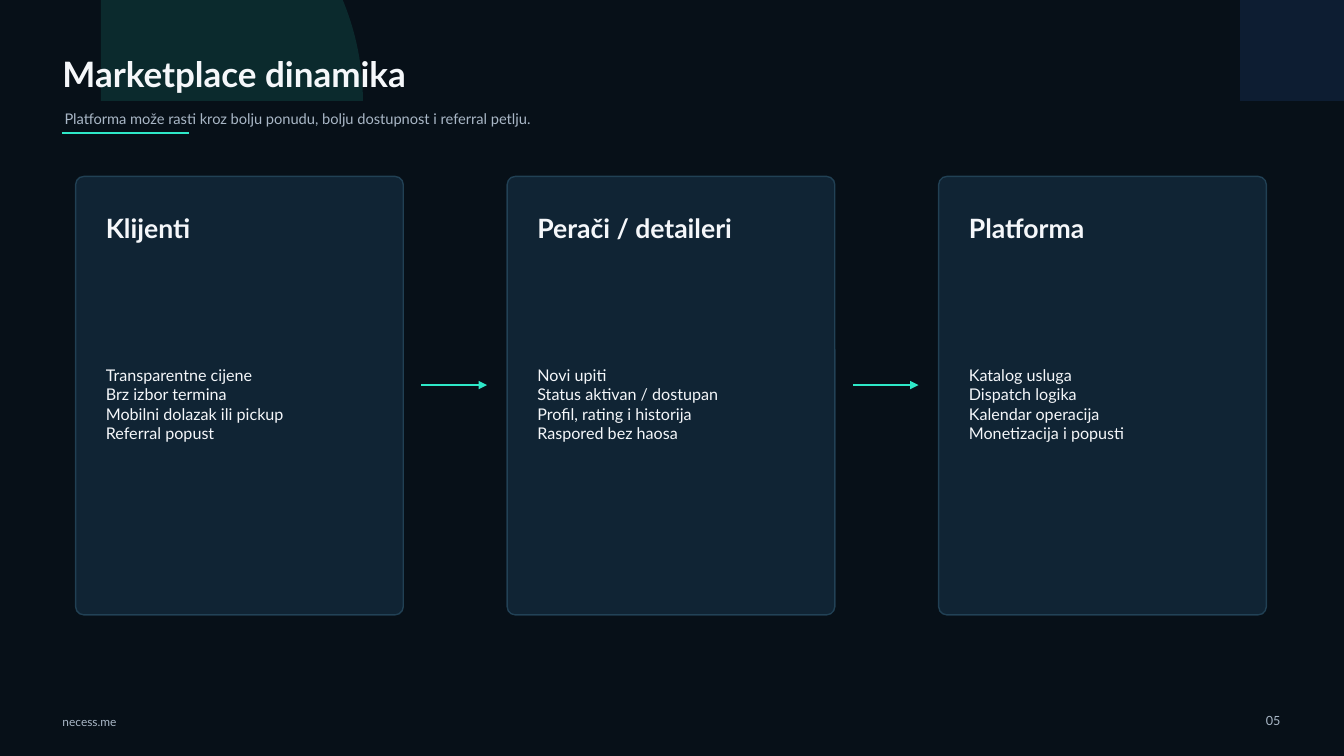
"""Build the marketplace dynamics slide: three linked cards on a dark background."""
import pptx
import pptx.dml.color
import pptx.enum.shapes
import pptx.enum.text
import pptx.oxml
import pptx.oxml.ns
import pptx.util

TITLE = "Marketplace dinamika"
SUBTITLE = "Platforma može rasti kroz bolju ponudu, bolju dostupnost i referral petlju."
SITE = "necess.me"
PAGE = "05"
CARDS = [
    ("Klijenti", ["Transparentne cijene", "Brz izbor termina",
                  "Mobilni dolazak ili pickup", "Referral popust"]),
    ("Perači / detaileri", ["Novi upiti", "Status aktivan / dostupan",
                            "Profil, rating i historija", "Raspored bez haosa"]),
    ("Platforma", ["Katalog usluga", "Dispatch logika",
                   "Kalendar operacija", "Monetizacija i popusti"]),
]

COLORS = {"night": "071018", "card": "102434", "edge": "25475C", "mint": "2EE8C8",
          "blue": "3B82F6", "white": "F5F7FA", "grey": "A9B7C6"}
STYLES = {
    "title": {"size": 25, "color": "white", "bold": True},
    "subtitle": {"size": 10.5, "color": "grey"},
    "site": {"size": 8.5, "color": "grey"},
    "page": {"size": 9, "color": "grey"},
    "heading": {"size": 19, "color": "white", "bold": True},
    "points": {"size": 11.5, "color": "white"},
}
FONT = "Lato"
PX = 9144
WIDTH, HEIGHT = 1333, 750
CARD_LEFT, CARD_TOP, CARD_WIDTH, CARD_HEIGHT = 75, 175, 325, 435
CARD_STEP = 428
CARD_PADDING = 30
ARROW_GAP, ARROW_LENGTH, ARROW_Y = 18, 65, 382

SHAPES = pptx.enum.shapes.MSO_SHAPE
ALIGN = pptx.enum.text.PP_ALIGN


def emu(*lengths):
    return [pptx.util.Emu(length * PX) for length in lengths]


def rgb(name):
    return pptx.dml.color.RGBColor.from_string(COLORS[name])


def add_xml(parent, tag, **attributes):
    child = pptx.oxml.parse_xml(f"<a:{tag} {pptx.oxml.ns.nsdecls('a')}/>")
    for key, value in attributes.items():
        child.set(key, value)
    parent.append(child)


def set_opacity(area, percent):
    for color in area.iter(pptx.oxml.ns.qn("a:srgbClr")):
        add_xml(color, "alpha", val=str(percent * 1000))


def add_panel(slide, kind, box, fill, line=None):
    panel = slide.shapes.add_shape(kind, *emu(*box))
    panel.shadow.inherit = False
    panel.fill.solid()
    panel.fill.fore_color.rgb = rgb(fill)
    if line:
        panel.line.color.rgb = rgb(line)
        panel.line.width = pptx.util.Pt(1)
    else:
        panel.line.fill.background()
    return panel


def add_text(slide, box, lines, style, align=ALIGN.LEFT):
    frame = slide.shapes.add_textbox(*emu(*box)).text_frame
    layout = {"word_wrap": True, "vertical_anchor": pptx.enum.text.MSO_ANCHOR.MIDDLE,
              "margin_left": 0, "margin_top": 0, "margin_right": 0, "margin_bottom": 0}
    for key, value in layout.items():
        setattr(frame, key, value)
    look = STYLES[style]
    font_values = {"name": FONT, "size": pptx.util.Pt(look["size"]),
                   "bold": look.get("bold", False)}
    frame.text = "\n".join(lines)
    for paragraph in frame.paragraphs:
        paragraph.alignment = align
        font = paragraph.runs[0].font
        for key, value in font_values.items():
            setattr(font, key, value)
        font.color.rgb = rgb(look["color"])


def add_rule(slide, left, y, length, arrow=False):
    rule = slide.shapes.add_connector(pptx.enum.shapes.MSO_CONNECTOR.STRAIGHT,
                                      *emu(left, y, left + length, y))
    rule.line.color.rgb = rgb("mint")
    rule.line.width = pptx.util.Pt(2)
    if arrow:
        add_xml(rule.line._get_or_add_ln(), "tailEnd", type="triangle")
    add_xml(rule._element.spPr, "effectLst")


def add_card(slide, left, heading, points):
    card = add_panel(slide, SHAPES.ROUNDED_RECTANGLE,
                     (left, CARD_TOP, CARD_WIDTH, CARD_HEIGHT), "card", "edge")
    card.adjustments[0] = 0.025
    set_opacity(card.line._get_or_add_ln(), 85)
    text_left = left + CARD_PADDING
    add_text(slide, (text_left, 208, 250, 36), [heading], "heading")
    add_text(slide, (text_left, 266, 260, 270), points, "points")


def main():
    deck = pptx.Presentation()
    deck.slide_width, deck.slide_height = emu(WIDTH, HEIGHT)
    slide = deck.slides.add_slide(deck.slide_layouts[6])
    slide.background.fill.solid()
    slide.background.fill.fore_color.rgb = rgb("night")

    add_panel(slide, SHAPES.RECTANGLE, (0, 0, WIDTH, HEIGHT), "night", "night")
    for box, color in [((-160, -160, 520, 520), "mint"), ((950, -180, 560, 560), "blue")]:
        glow = add_panel(slide, SHAPES.ARC, box, color)
        set_opacity(glow._element.spPr, 12)

    add_text(slide, (62, 45, 840, 55), [TITLE], "title")
    add_text(slide, (64, 100, 860, 36), [SUBTITLE], "subtitle")
    add_rule(slide, 62, 132, 125)
    add_text(slide, (62, 705, 140, 22), [SITE], "site")
    add_text(slide, (1225, 702, 45, 25), [PAGE], "page", ALIGN.RIGHT)

    for index, (heading, points) in enumerate(CARDS):
        left = CARD_LEFT + index * CARD_STEP
        add_card(slide, left, heading, points)
        if index < len(CARDS) - 1:
            add_rule(slide, left + CARD_WIDTH + ARROW_GAP, ARROW_Y, ARROW_LENGTH, arrow=True)

    deck.save("out.pptx")


if __name__ == "__main__":
    main()
